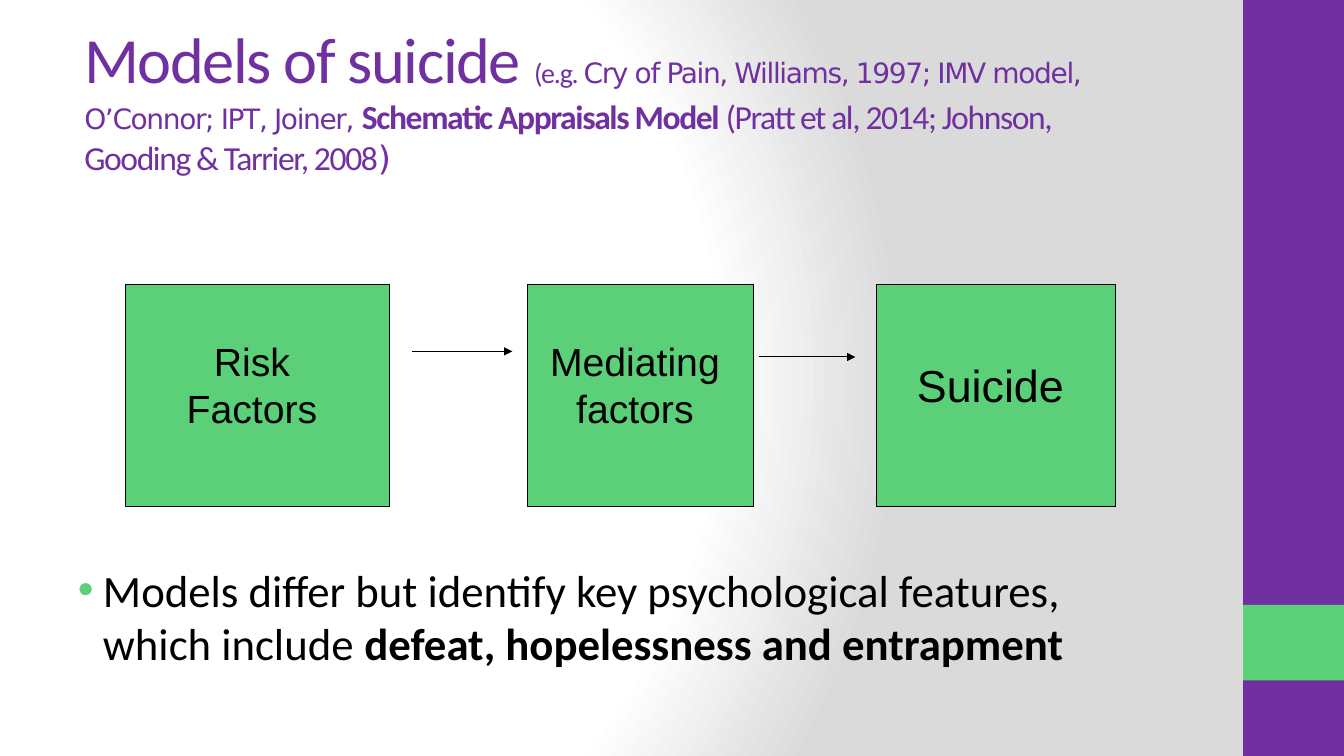
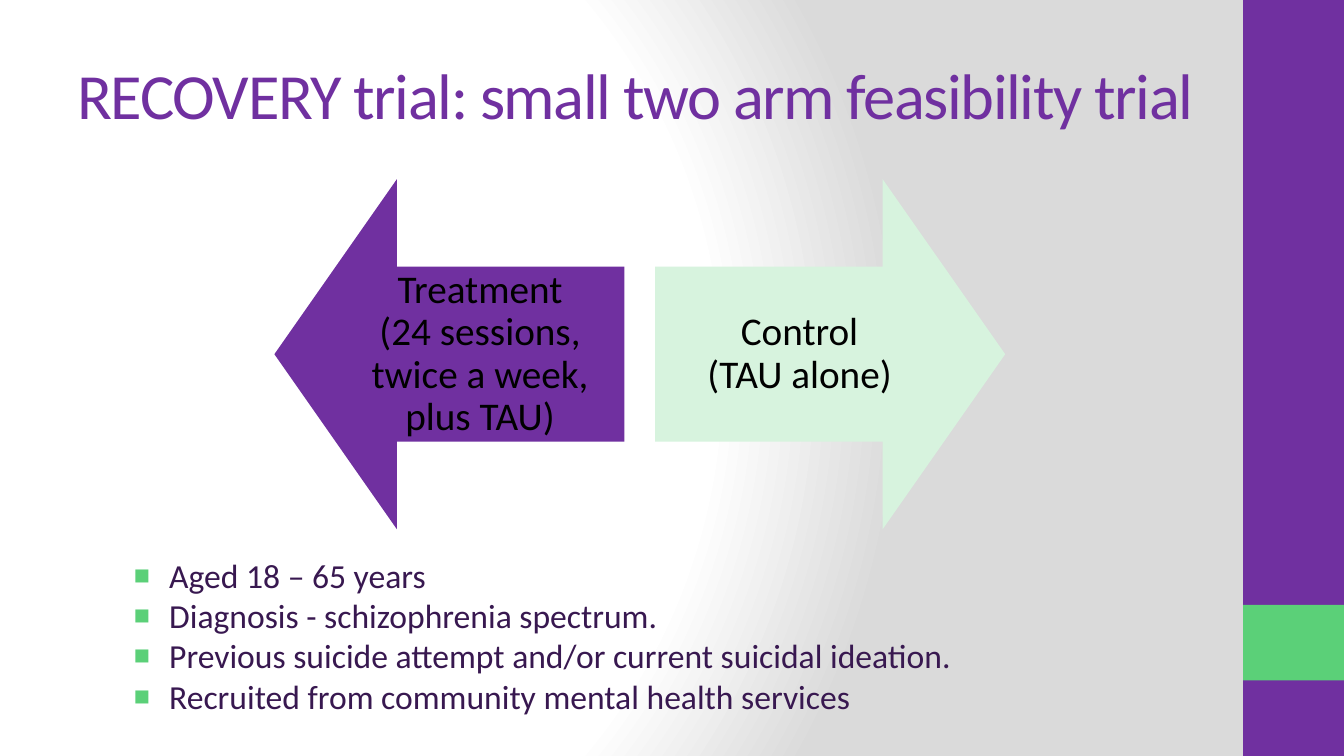
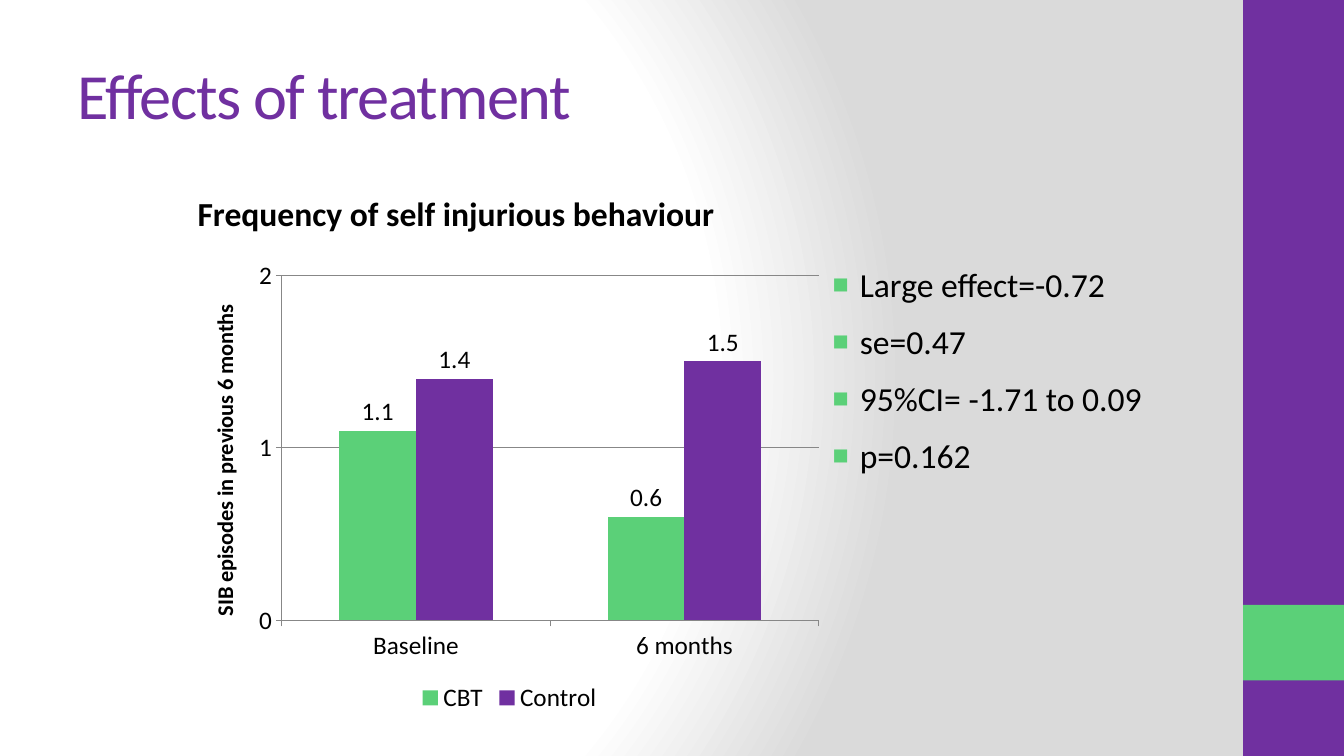
"""Build three slides on models of suicide and a feasibility trial."""
from dataclasses import dataclass

from lxml import etree
from pptx import Presentation
from pptx.chart.data import CategoryChartData
from pptx.dml.color import RGBColor
from pptx.enum import chart as kinds, shapes, text as txt
from pptx.oxml import parse_xml
from pptx.oxml.ns import nsdecls, qn
from pptx.util import Pt

PURPLE, GREEN, MINT = "7030A0", "5BD078", "D7F3DE"
BLACK, PLUM, GREY = "000000", "381850", "878787"
SANS = "Calibri"
WIDE = "DejaVu Sans"
SIDE = 250
RECT = shapes.MSO_SHAPE.RECTANGLE


@dataclass
class Area:
    left: float
    top: float
    width: float
    height: float

    def lengths(self):
        return [Pt(v) for v in (self.left, self.top, self.width, self.height)]


@dataclass
class Part:
    text: str
    size: float | None = None
    face: str | None = None
    bold: bool | None = None


@dataclass
class Bullet:
    char: str
    scale: int
    indent: float
    hang: float
    gap: float


@dataclass
class Box:
    left: float
    width: float
    label: str
    size: float


@dataclass
class Arrow:
    kind: shapes.MSO_SHAPE
    left: float
    fill: str
    lines: tuple[str, ...]


BANDS = [(Area(888, 0, 72, 540), PURPLE), (Area(888, 432, 72, 54), GREEN)]
HEAD = Area(48, 22, 822, 90)
MODEL = [
    Part("Models of suicide "),
    Part("(e.g. ", 20),
    Part("Cry of Pain, Williams, 1997; IMV model, O’Connor; IPT, Joiner, ", 20, WIDE),
    Part("Schematic Appraisals Model ", 24, bold=True),
    Part("(Pratt et al, 2014; Johnson, Gooding & Tarrier, 2008", 24),
    Part(")", 24, WIDE),
]
CLAIM = [
    Part("Models differ but identify key psychological features, which include "),
    Part("defeat, hopelessness and entrapment", bold=True),
]
BOXES = [
    Box(90, 188, "Risk Factors", 28),
    Box(377, 161, "Mediating factors", 28),
    Box(626, 171, "Suicide", 32),
]
LINKS = [(294, 366, 251), (542, 611, 255)]
ARMS = [
    Arrow(shapes.MSO_SHAPE.LEFT_ARROW, 196, PURPLE,
          ("Treatment", "(24 sessions, twice a week, plus TAU)")),
    Arrow(shapes.MSO_SHAPE.RIGHT_ARROW, 468, MINT, ("Control", "(TAU alone)")),
]
ENTRY = [
    "Aged 18 – 65 years",
    "Diagnosis - schizophrenia spectrum.",
    "Previous suicide attempt and/or current suicidal ideation.",
    "Recruited from community mental health services",
]
STATS = ["Large effect=-0.72", "se=0.47", "95%CI= -1.71 to 0.09", "p=0.162"]
SERIES = [("CBT", (1.1, 0.6), GREEN), ("Control", (1.4, 1.5), PURPLE)]


def tint(code: str) -> RGBColor:
    return RGBColor.from_string(code)


def style(font, size: float, code: str = BLACK, face: str = SANS, bold=None) -> None:
    font.size, font.name, font.bold = Pt(size), face, bold
    font.color.rgb = tint(code)


def inset(frame, left: float, top: float, right: float, bottom: float) -> None:
    frame.margin_left, frame.margin_top = Pt(left), Pt(top)
    frame.margin_right, frame.margin_bottom = Pt(right), Pt(bottom)


def place(shape, area: Area):
    shape.left, shape.top, shape.width, shape.height = area.lengths()
    frame = shape.text_frame
    frame.word_wrap, frame.auto_size = True, txt.MSO_AUTO_SIZE.NONE
    return frame


def write(para, parts: list[Part]) -> None:
    for part in parts:
        run = para.add_run()
        run.text = part.text
        if part.size:
            run.font.size = Pt(part.size)
        if part.face:
            run.font.name = part.face
        if part.bold:
            run.font.bold = True


def mark(para, bullet: Bullet) -> None:
    props = para._p.get_or_add_pPr()
    props.set("marL", str(Pt(bullet.indent)))
    props.set("indent", str(Pt(-bullet.hang)))
    color = etree.SubElement(props, qn("a:buClr"))
    etree.SubElement(color, qn("a:srgbClr"), val=GREEN)
    etree.SubElement(props, qn("a:buSzPct"), val=str(bullet.scale * 1000))
    etree.SubElement(props, qn("a:buFont"), typeface="Arial")
    etree.SubElement(props, qn("a:buChar"), char=bullet.char)
    para.space_before = Pt(bullet.gap)


def fill_list(slide, area: Area, items: list[list[Part]], bullet: Bullet,
              size: float, code: str = BLACK):
    frame = place(slide.placeholders[1], area)
    for i, parts in enumerate(items):
        para = frame.add_paragraph() if i else frame.paragraphs[0]
        mark(para, bullet)
        style(para.font, size, code)
        write(para, parts)
    return frame


def draw(slide, kind, area: Area, code: str, edge: str | None = None):
    shape = slide.shapes.add_shape(kind, *area.lengths())
    shape.shadow.inherit = False
    shape.fill.solid()
    shape.fill.fore_color.rgb = tint(code)
    if edge:
        shape.line.color.rgb = tint(edge)
        shape.line.width = Pt(0.75)
    else:
        shape.line.fill.background()
    return shape


def link(slide, start: float, end: float, y: float) -> None:
    line = slide.shapes.add_connector(
        shapes.MSO_CONNECTOR.STRAIGHT, Pt(start), Pt(y), Pt(end), Pt(y))
    line.line.color.rgb = tint(BLACK)
    line.line.width = Pt(0.75)
    etree.SubElement(line.line._get_or_add_ln(), qn("a:tailEnd"), type="triangle")
    etree.SubElement(line._element.spPr, qn("a:effectLst"))


def set_master(deck) -> None:
    master = deck.slide_master
    master.background.fill.gradient()
    old = master.element.find(".//" + qn("p:bgPr") + "/" + qn("a:gradFill"))
    stops = "".join(
        f'<a:gs pos="{pos}000"><a:srgbClr val="{code}"/></a:gs>'
        for pos, code in ((0, "FFFFFF"), (75, "FFFFFF"), (100, "DADADA")))
    old.getparent().replace(old, parse_xml(
        f'<a:gradFill {nsdecls("a")} rotWithShape="1"><a:gsLst>{stops}</a:gsLst>'
        '<a:path path="circle"><a:fillToRect l="20000" t="50000" r="100000" '
        'b="50000"/></a:path></a:gradFill>'))
    level = master.element.find(".//" + qn("p:titleStyle") + "/" + qn("a:lvl1pPr"))
    level.set("algn", "l")
    level.find(qn("a:defRPr")).set("spc", "-100")


def start(deck, parts: list[Part], area: Area = HEAD):
    slide = deck.slides.add_slide(deck.slide_layouts[1])
    for band, code in BANDS:
        draw(slide, RECT, band, code)
    frame = place(slide.shapes.title, area)
    frame.vertical_anchor = txt.MSO_ANCHOR.MIDDLE
    para = frame.paragraphs[0]
    style(para.font, 46, PURPLE)
    write(para, parts)
    return slide


def add_models(deck) -> None:
    slide = start(deck, MODEL, Area(53, 9, 744, 122))
    fill_list(slide, Area(39, 398, 792, 100), [CLAIM],
              Bullet("•", 100, 27.36, 18, 0), 32)
    for box in BOXES:
        shape = draw(slide, RECT, Area(box.left, 203.5, box.width, 158.5), GREEN, BLACK)
        frame = shape.text_frame
        frame.word_wrap = True
        inset(frame, 14, 4, 22, 20)
        para = frame.paragraphs[0]
        para.alignment = txt.PP_ALIGN.CENTER
        style(para.font, box.size, face="Arial")
        write(para, [Part(box.label)])
    for ends in LINKS:
        link(slide, *ends)


def add_trial(deck) -> None:
    slide = start(deck, [Part("RECOVERY trial: small two arm feasibility trial")])
    for arm in ARMS:
        shape = draw(slide, arm.kind, Area(arm.left, 128, SIDE, SIDE), arm.fill)
        shape.adjustments[0], shape.adjustments[1] = 0.5, 0.35
        frame = shape.text_frame
        frame.word_wrap = True
        inset(frame, 16, 16, 16, 16)
        para = frame.paragraphs[0]
        para.alignment, para.line_spacing = txt.PP_ALIGN.CENTER, 0.9
        style(para.font, 28)
        for i, line in enumerate(arm.lines):
            if i:
                para.add_line_break()
            write(para, [Part(line)])
    frame = fill_list(slide, Area(82, 389, 723, 128), [[Part(t)] for t in ENTRY],
                      Bullet("■", 80, 34.56, 25.2, 0), 24, PLUM)
    inset(frame, 4.3, 7.2, 7.2, 3.6)


def add_chart(slide, area: Area) -> None:
    data = CategoryChartData()
    data.categories = ["Baseline", "6 months"]
    for name, values, _ in SERIES:
        data.add_series(name, values)
    chart = slide.shapes.add_chart(
        kinds.XL_CHART_TYPE.COLUMN_CLUSTERED, *area.lengths(), data).chart
    style(chart.font, 18)
    chart.has_title = False
    chart.has_legend = True
    chart.legend.position = kinds.XL_LEGEND_POSITION.BOTTOM
    chart.legend.include_in_layout = False
    plot = chart.plots[0]
    plot.gap_width, plot.overlap, plot.vary_by_categories = 150, 0, False
    for series, (_, _, code) in zip(plot.series, SERIES):
        series.format.fill.solid()
        series.format.fill.fore_color.rgb = tint(code)
        series.data_labels.show_value = True
        series.data_labels.position = kinds.XL_LABEL_POSITION.OUTSIDE_END
    axis = chart.value_axis
    axis.minimum_scale, axis.maximum_scale, axis.major_unit = 0, 2, 1
    axis.has_major_gridlines = True
    for line in (axis.format.line, axis.major_gridlines.format.line,
                 chart.category_axis.format.line):
        line.color.rgb = tint(GREY)
        line.width = Pt(0.75)
    for each in (axis, chart.category_axis):
        each.major_tick_mark = kinds.XL_TICK_MARK.OUTSIDE
    para = axis.axis_title.text_frame.paragraphs[0]
    style(para.font, 16, bold=True)
    write(para, [Part("SIB episodes in previous 6 months")])


def add_effects(deck) -> None:
    slide = start(deck, [Part("Effects of treatment")])
    add_chart(slide, Area(134, 179, 460, 334))
    area = Area(134, 134, 683, 36)
    frame = place(slide.shapes.add_textbox(*area.lengths()), area)
    para = frame.paragraphs[0]
    style(para.font, 24, bold=True)
    write(para, [Part("Frequency of self injurious behaviour")])
    fill_list(slide, Area(587.5, 185, 244, 320), [[Part(t)] for t in STATS],
              Bullet("■", 80, 19.44, 21.6, 12), 24)


def main() -> None:
    deck = Presentation()
    deck.slide_width, deck.slide_height = Pt(960), Pt(540)
    set_master(deck)
    add_models(deck)
    add_trial(deck)
    add_effects(deck)
    deck.save("out.pptx")


if __name__ == "__main__":
    main()
